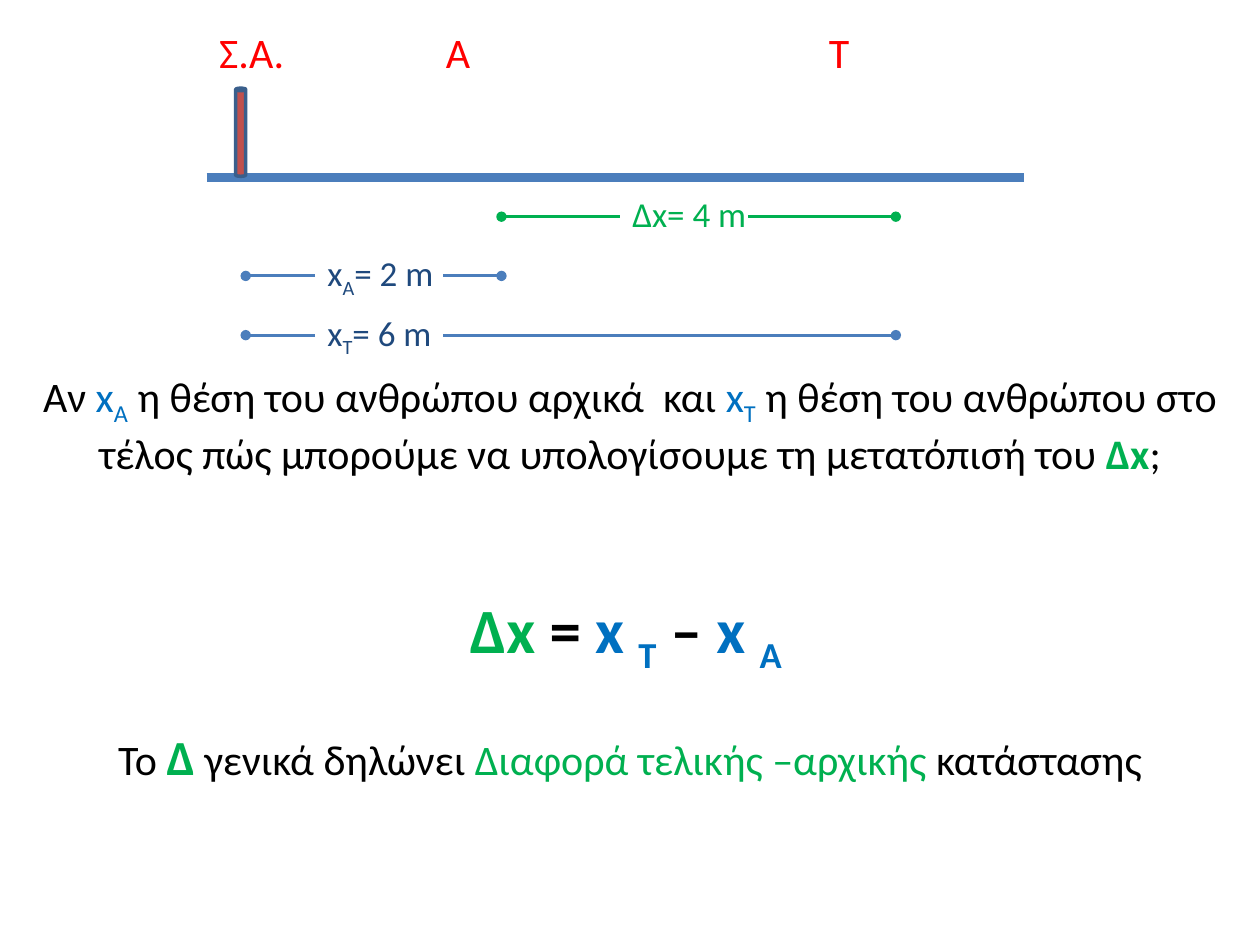
from lxml.etree import SubElement
from pptx import Presentation
from pptx.dml.color import RGBColor
from pptx.enum.shapes import MSO_CONNECTOR as Connector, MSO_SHAPE as Shape
from pptx.enum.text import MSO_ANCHOR as Anchor, PP_ALIGN as Align
from pptx.oxml.ns import qn
from pptx.util import Inches, Pt

RED = RGBColor(0xFF, 0x00, 0x00)
GREEN = RGBColor(0x00, 0xB0, 0x50)
AXIS_BLUE = RGBColor(0x4B, 0x7E, 0xBC)
NAVY = RGBColor(0x1F, 0x49, 0x7D)
SYMBOL_BLUE = RGBColor(0x00, 0x70, 0xC0)
BLACK = RGBColor(0x00, 0x00, 0x00)
POST_FILL = RGBColor(0xC0, 0x50, 0x4D)
POST_EDGE = RGBColor(0x3A, 0x5F, 0x8C)

ORIGIN_X, START_X, END_X = 1.95, 3.98, 7.11
LABEL_HEIGHT = 0.55


def apply_format(target, values):
    for name, value in values.items():
        setattr(target, name, value)


def add_words(paragraph, words, size, color, bold=False, subscript=False):
    run = paragraph.add_run()
    run.text = words
    apply_format(run.font, {"name": "Calibri", "size": Pt(size), "bold": bold})
    run.font.color.rgb = color
    if subscript:
        run.font._element.set("baseline", "-25000")


def add_text(slide, box, paragraphs, **paragraph_format):
    frame = slide.shapes.add_textbox(*map(Inches, box)).text_frame
    apply_format(frame, {"word_wrap": True, "vertical_anchor": Anchor.TOP})
    for index, (space_before, runs) in enumerate(paragraphs):
        paragraph = frame.add_paragraph() if index else frame.paragraphs[0]
        apply_format(paragraph, {"space_before": Pt(space_before), **paragraph_format})
        for words in runs:
            add_words(paragraph, *words)


def add_line(slide, start_x, end_x, y, color, width, oval_end=False):
    line = slide.shapes.add_connector(
        Connector.STRAIGHT, Inches(start_x), Inches(y), Inches(end_x), Inches(y))
    line.line.color.rgb = color
    line.line.width = Pt(width)
    if oval_end:
        SubElement(line.line._get_or_add_ln(), qn("a:tailEnd"), type="oval")
    SubElement(line._element.spPr, qn("a:effectLst"))


def add_axis(slide, left, top, width, height):
    add_line(slide, left, left + width, top + height, AXIS_BLUE, 5)
    post = slide.shapes.add_shape(
        Shape.CAN, Inches(1.87), Inches(0.7), Inches(0.08), Inches(0.7))
    post.shadow.inherit = False
    post.fill.solid()
    post.fill.fore_color.rgb = POST_FILL
    post.line.color.rgb = POST_EDGE
    post.line.width = Pt(2)
    for label, label_left, label_width in (
            ("Σ.Α.", left, 0.78), ("Α", 3.44, 0.55), ("Τ", 6.48, 0.55)):
        add_text(slide, (label_left, top, label_width, LABEL_HEIGHT),
                 [(0, [(label, 24, RED)])], space_after=Pt(10))


def add_measure(slide, start_x, end_x, y, label_left, line_color, label):
    add_line(slide, label_left, start_x, y, line_color, 1.75, oval_end=True)
    add_line(slide, label_left + 1.02, end_x, y, line_color, 1.75, oval_end=True)
    add_text(slide, (label_left, y - 0.24, 1.17, LABEL_HEIGHT),
             [(0, label)], space_after=Pt(10))


def position_label(point, value):
    return [("x", 20, NAVY), (point, 20, NAVY, False, True), (value, 20, NAVY)]


def add_measures(slide, top, row_gap):
    measures = (
        (START_X, END_X, 4.92, GREEN, [("Δx= 4 m", 20, GREEN)]),
        (ORIGIN_X, START_X, 2.5, AXIS_BLUE, position_label("Α", "= 2 m")),
        (ORIGIN_X, END_X, 2.5, AXIS_BLUE, position_label("Τ", "= 6 m")),
    )
    for row, (start_x, end_x, label_left, color, label) in enumerate(measures):
        add_measure(slide, start_x, end_x, top + row * row_gap, label_left, color, label)


def add_explanation(slide, box):
    question = [
        ("Αν ", 24, BLACK),
        ("x", 24, SYMBOL_BLUE),
        ("Α", 24, SYMBOL_BLUE, False, True),
        (" η θέση του ανθρώπου αρχικά  και ", 24, BLACK),
        ("x", 24, SYMBOL_BLUE),
        ("T", 24, SYMBOL_BLUE, False, True),
        (" η θέση του ανθρώπου στο τέλος πώς μπορούμε να υπολογίσουμε"
         " τη μετατόπισή του ", 24, BLACK),
        ("Δx", 24, GREEN, True),
        (";", 24, BLACK),
    ]
    formula = [
        ("Δx", 36, GREEN, True),
        (" = ", 36, BLACK, True),
        ("x ", 36, SYMBOL_BLUE, True),
        ("T", 36, SYMBOL_BLUE, True, True),
        (" – ", 36, BLACK, True),
        ("x ", 36, SYMBOL_BLUE, True),
        ("A ", 36, SYMBOL_BLUE, True, True),
    ]
    meaning = [
        ("Το ", 24, BLACK),
        ("Δ", 28, GREEN, True),
        (" γενικά δηλώνει ", 24, BLACK),
        ("Διαφορά τελικής –αρχικής ", 24, GREEN),
        ("κατάστασης", 24, BLACK),
    ]
    add_text(slide, box, [(0, question), (64, formula), (29, meaning)],
             alignment=Align.CENTER)


def main():
    deck = Presentation()
    deck.slide_width, deck.slide_height = Inches(10), Inches(7.5)
    slide = deck.slides.add_slide(deck.slide_layouts[6])
    add_axis(slide, 1.64, 0.16, 6.49, 1.25)
    add_measures(slide, 1.72, 0.47)
    add_explanation(slide, (0, 2.89, 10, 4.14))
    deck.save("out.pptx")


if __name__ == "__main__":
    main()
